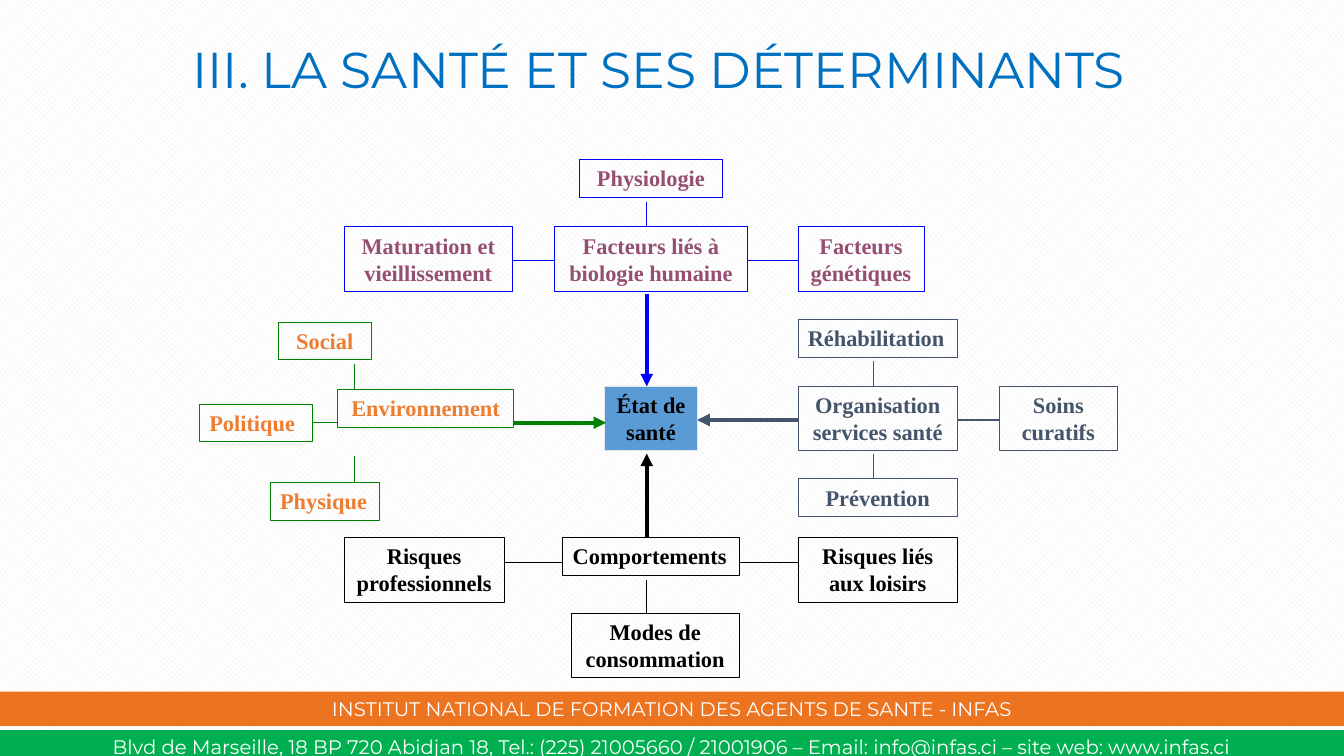
import pptx
import pptx.util
import pptx.dml.color
import pptx.enum.dml
import pptx.enum.shapes
import pptx.enum.text
import pptx.oxml

Pt = pptx.util.Pt
RGB = pptx.dml.color.RGBColor.from_string
ALIGN = pptx.enum.text.PP_ALIGN
ANCHOR = pptx.enum.text.MSO_ANCHOR
NS = 'xmlns:a="http://schemas.openxmlformats.org/drawingml/2006/main"'

COLORS = {
    "white": "FFFFFF", "pattern": "F2F2F2", "title": "0070C0",
    "footer": "00B050", "banner": "EC7320",
    "state": "5B9BD5", "state_line": "E7E6E6",
    "black": "000000", "blue": "0000FF", "plum": "954F72",
    "green": "008000", "orange": "ED7D31", "slate": "44546A",
}

prs = pptx.Presentation()
prs.slide_width, prs.slide_height = Pt(960), Pt(540)
s = prs.slides.add_slide(prs.slide_layouts[6])

bg = s.background.fill
bg.patterned()
bg.pattern = pptx.enum.dml.MSO_PATTERN.SOLID_DIAMOND
bg.fore_color.rgb = RGB(COLORS["pattern"])
bg.back_color.rgb = RGB(COLORS["white"])


def add_box(text, box, color, size, font, fill=None, line=None, width=0.5,
            anchor=ANCHOR.TOP, align=ALIGN.CENTER, bold=False):
    sp = s.shapes.add_shape(pptx.enum.shapes.MSO_SHAPE.RECTANGLE, *map(Pt, box))
    sp.shadow.inherit = False
    if fill:
        sp.fill.solid()
        sp.fill.fore_color.rgb = RGB(COLORS[fill])
    else:
        sp.fill.background()
    if line:
        sp.line.color.rgb = RGB(COLORS[line])
        sp.line.width = Pt(width)
    else:
        sp.line.fill.background()
    tf = sp.text_frame
    tf.word_wrap = True
    tf.vertical_anchor = anchor
    p = tf.paragraphs[0]
    p.alignment = align
    r = p.add_run()
    r.text = text
    r.font.name = font
    r.font.size = Pt(size)
    r.font.bold = bold
    r.font.color.rgb = RGB(COLORS[color])
    return sp


def add_line(points, color, arrow=False):
    cx = s.shapes.add_connector(pptx.enum.shapes.MSO_CONNECTOR.STRAIGHT, *map(Pt, points))
    cx.line.color.rgb = RGB(COLORS[color])
    cx.line.width = Pt(3 if arrow else 0.75)
    if arrow:
        cx.line._get_or_add_ln().append(pptx.oxml.parse_xml(f'<a:tailEnd {NS} type="triangle"/>'))
    cx._element.spPr.append(pptx.oxml.parse_xml(f"<a:effectLst {NS}/>"))


footer = add_box(
    "Blvd de Marseille, 18 BP 720 Abidjan 18, Tel.: (225) 21005660 / 21001906 – "
    "Email: info@infas.ci – site web: www.infas.ci",
    (0, 522, 960, 20), "white", 14, "Montserrat", "footer", "footer", 1, ANCHOR.BOTTOM)
footer.text_frame.margin_top = footer.text_frame.margin_bottom = 0
add_box("INSTITUT NATIONAL DE FORMATION DES AGENTS DE SANTE - INFAS",
        (0, 494, 960, 24.5), "white", 14, "Montserrat", "banner")
title = add_box("III. LA SANTÉ ET SES DÉTERMINANTS", (66, 6, 809, 91.5),
                "title", 36, "Montserrat", anchor=ANCHOR.MIDDLE)
title.text_frame.paragraphs[0].line_spacing = 0.9

ONE, TWO = 27, 46
add_box("État de santé", (432, 276, 66, TWO), "black", 16, "Times New Roman",
        "state", "state_line", bold=True)

groups = [
    ("black", "black", [
        ("Comportements", 402, 384, 126, ONE),
        ("Risques liés aux loisirs", 570, 384, 114, TWO),
        ("Modes de consommation", 408, 438, 120, TWO),
        ("Risques professionnels", 246, 384, 114, TWO),
    ], (462, 384, 462, 324), [
        (462, 414, 462, 438), (528, 402, 570, 402), (360, 402, 402, 402),
    ]),
    ("blue", "plum", [
        ("Maturation et vieillissement", 246, 162, 120, TWO),
        ("Facteurs génétiques", 570, 162, 90, TWO),
        ("Facteurs liés à biologie humaine", 396, 162, 138, TWO),
        ("Physiologie", 414, 114, 102, ONE),
    ], (462, 210, 462, 276), [
        (534, 186, 570, 186), (462, 144, 462, 162), (366, 186, 396, 186),
    ]),
    ("green", "orange", [
        ("Environnement", 241, 278, 126, ONE),
        ("Politique", 142.5, 288.5, 81, ONE),
        ("Social", 199, 230, 66, ONE),
        ("Physique", 193, 344.5, 78, ONE),
    ], (367, 302, 433, 302), [
        (223, 302, 241, 302), (253, 326, 253, 344), (253, 260, 253, 278),
    ]),
    ("slate", "slate", [
        ("Réhabilitation", 570, 228, 114, ONE),
        ("Organisation services santé", 570, 276, 114, TWO),
        ("Soins curatifs", 714, 276, 84, TWO),
        ("Prévention", 570, 342, 114, ONE),
    ], (570, 300, 498, 300), [
        (684, 300, 714, 300), (624, 258, 624, 276), (624, 324, 624, 342),
    ]),
]
left_aligned = {"Comportements", "Politique", "Physique", "Réhabilitation"}

for line, color, boxes, arrow, links in groups:
    for text, *box in boxes:
        align = ALIGN.LEFT if text in left_aligned else ALIGN.CENTER
        add_box(text, box, color, 16, "Times New Roman", line=line, align=align, bold=True)
    add_line(arrow, line, True)
    for link in links:
        add_line(link, line)

prs.save("out.pptx")
